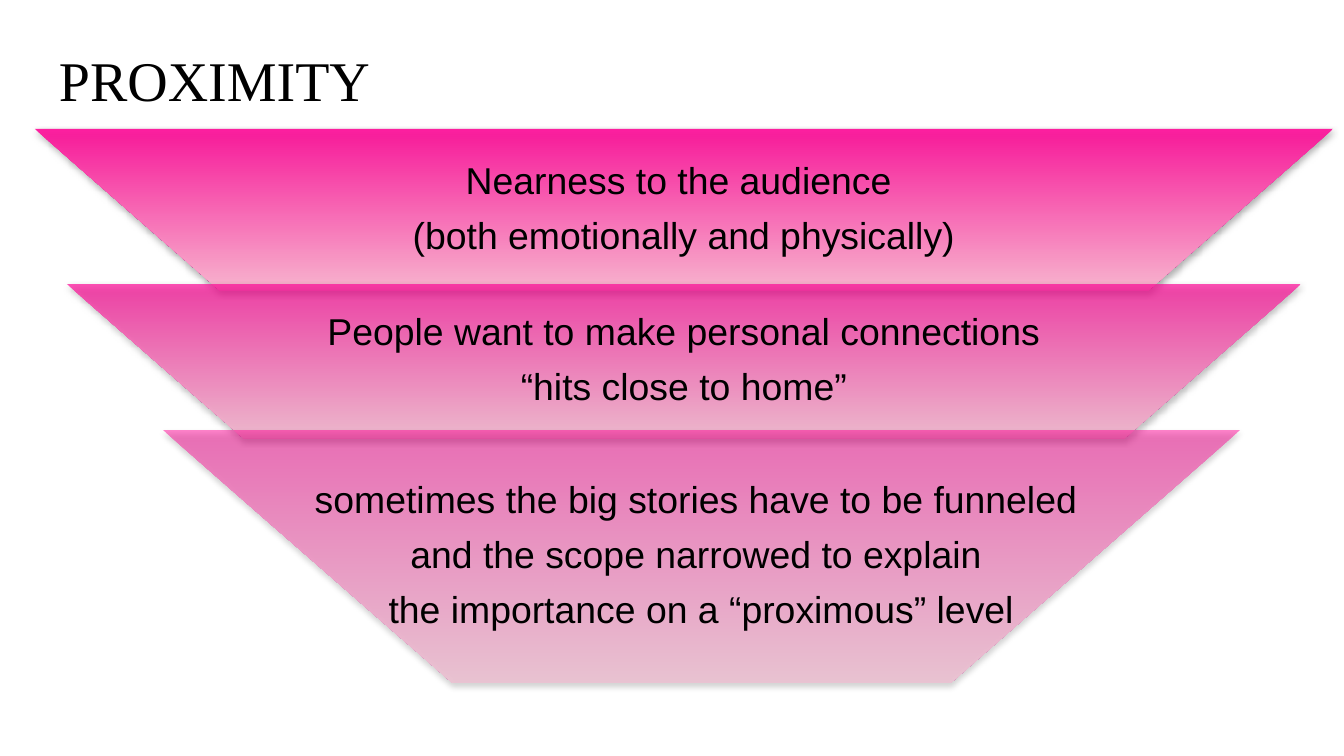
from dataclasses import dataclass

from lxml.etree import SubElement
from pptx import Presentation
from pptx.dml.color import RGBColor as Rgb
from pptx.enum.shapes import MSO_SHAPE as Preset
from pptx.enum.text import MSO_ANCHOR as Anchor, PP_ALIGN as Align
from pptx.oxml.ns import qn
from pptx.util import Emu, Pt

EMU_PER_PX = 914400 / 134.4


def px(length):
    return Emu(round(length * EMU_PER_PX))


@dataclass(frozen=True)
class Theme:
    ink: str = "000000"
    deep_pink: str = "FF0A98"
    pale_pink: str = "FFB4D1"
    title_font: str = "Times New Roman"
    body_font: str = "Arial"
    title_size: int = 30
    body_size: int = 20


def add_xml(parent, tag, **attributes):
    return SubElement(parent, qn(tag), {key: str(value) for key, value in attributes.items()})


def add_color(parent, color, opacity):
    add_xml(add_xml(parent, "a:srgbClr", val=color), "a:alpha", val=opacity * 1000)


class FunnelSlide:
    def __init__(self, slide, theme):
        self.slide = slide
        self.theme = theme

    def text(self, box, lines, font, size, inset, paragraph_format):
        frame = self.slide.shapes.add_textbox(*map(px, box)).text_frame
        sides = {f"margin_{side}": px(inset) for side in ("left", "top", "right", "bottom")}
        for name, value in {**sides, "word_wrap": True, "vertical_anchor": Anchor.MIDDLE}.items():
            setattr(frame, name, value)
        for index, line in enumerate(lines):
            paragraph = frame.paragraphs[0] if index == 0 else frame.add_paragraph()
            for name, value in paragraph_format.items():
                setattr(paragraph, name, value)
            run = paragraph.add_run()
            run.text = line
            for name, value in {"name": font, "size": Pt(size)}.items():
                setattr(run.font, name, value)
            run.font.color.rgb = Rgb.from_string(self.theme.ink)

    def title(self, box, wording):
        self.text(box, [wording], self.theme.title_font, self.theme.title_size, 13,
                  {"alignment": Align.LEFT})

    def band(self, box, opacity):
        """Draw an upside-down trapezoid with a translucent gradient and a soft shadow."""
        trapezoid = self.slide.shapes.add_shape(Preset.TRAPEZOID, *map(px, box))
        trapezoid.rotation = 180
        trapezoid.adjustments[0] = 1.144
        trapezoid.line.fill.background()
        properties = trapezoid.element.spPr

        gradient = properties.makeelement(qn("a:gradFill"), {"rotWithShape": "1"})
        stops = add_xml(gradient, "a:gsLst")
        for position, color in ((0, self.theme.deep_pink), (100, self.theme.pale_pink)):
            add_color(add_xml(stops, "a:gs", pos=position * 1000), color, opacity)
        add_xml(gradient, "a:lin", ang=270 * 60000, scaled=0)
        properties.find(qn("a:prstGeom")).addnext(gradient)

        effects = add_xml(properties, "a:effectLst")
        shadow = add_xml(effects, "a:outerShdw", blurRad=Pt(3.1), dist=Pt(1.8),
                         dir=90 * 60000, rotWithShape=0)
        add_color(shadow, self.theme.ink, 35)

    def level(self, box, opacity, text_share, lines):
        """Draw a band with lines centred in text_share of its width."""
        left, top, width, height = box
        self.band(box, opacity)
        text_width = round(width * text_share)
        text_box = (left + (width - text_width) // 2, top, text_width, height)
        self.text(text_box, lines, self.theme.body_font, self.theme.body_size, 4,
                  {"alignment": Align.CENTER, "line_spacing": 0.9, "space_after": Pt(8)})


LEVELS = [
    ((35, 129, 1298, 161), 90, 0.65,
     ["Nearness to the audience ", "(both emotionally and physically)"]),
    ((67, 284, 1234, 154), 70, 0.65,
     ["People want to make personal connections", "“hits close to home”"]),
    ((163, 430, 1077, 253), 50, 1,
     ["sometimes the big stories have to be funneled ",
      "and the scope narrowed to explain ",
      "the importance on a “proximous” level"]),
]


def main():
    deck = Presentation()
    deck.slide_width, deck.slide_height = px(1344), px(756)
    funnel = FunnelSlide(deck.slides.add_slide(deck.slide_layouts[6]), Theme())
    funnel.title((46, 30, 1253, 99), "PROXIMITY")
    for level in LEVELS:
        funnel.level(*level)
    deck.save("out.pptx")


if __name__ == "__main__":
    main()
